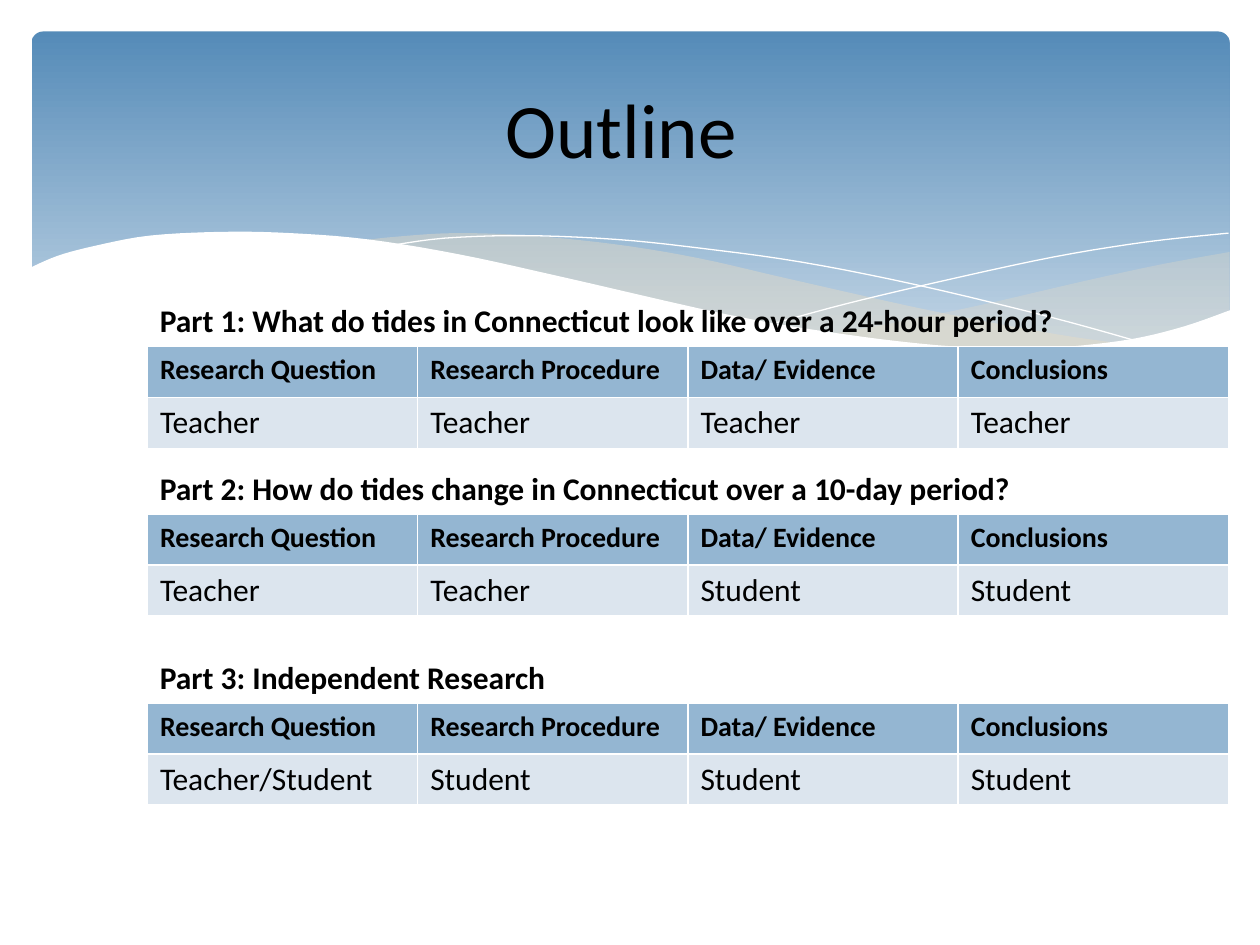
import pptx
import pptx.dml.color
import pptx.enum.shapes
import pptx.enum.text
import pptx.util
import lxml.etree

Inches = pptx.util.Inches
COLORS = {"text": "000000", "white": "FFFFFF", "sky": "558BB8", "haze": "BFD3E4",
          "sand": "EBDDC3", "header": "94B6D2", "row": "DCE5EE"}
HEADERS = ["Research Question", "Research Procedure", "Data/ Evidence", "Conclusions"]
PARTS = [
    (2.75, "Part 1: What do tides in Connecticut look like over a 24-hour period?",
     ["Teacher"] * 4),
    (4.08, "Part 2: How do tides change in Connecticut over a 10-day period?",
     ["Teacher", "Teacher", "Student", "Student"]),
    (5.58, "Part 3: Independent Research", ["Teacher/Student"] + ["Student"] * 3),
]
RIGHT_WAVE = [
    [(9.76, 2), (9.21, 2.1), (8.61, 2.23), (7.79, 2.42), (7.06, 2.57), (6.61, 2.65)],
    [(6.61, 2.65), (7.19, 2.72), (7.69, 2.77), (8.14, 2.78), (8.63, 2.75),
     (9.05, 2.69), (9.42, 2.59), (9.76, 2.47)],
]
LONG_WAVE = [
    [(8.93, 2.73), (8.37, 2.65), (7.41, 2.47), (6.29, 2.22), (5.55, 2.05),
     (4.89, 1.94), (4.2, 1.87), (3.61, 1.85), (3.13, 1.88), (2.86, 1.91)],
    [(2.86, 1.91), (3.42, 1.99), (4.04, 2.11), (4.91, 2.32), (5.84, 2.52),
     (6.65, 2.66), (7.36, 2.75), (7.96, 2.78), (8.48, 2.77), (8.93, 2.73)],
]
FALLING_LINE = [[(3.09, 1.95), (3.53, 1.89), (4.16, 1.87), (4.89, 1.9), (5.56, 1.97),
                 (6.36, 2.08), (7.27, 2.26), (8.31, 2.51), (9.07, 2.72)]]
RISING_LINE = [[(6.13, 2.57), (6.72, 2.41), (7.48, 2.23), (8.36, 2.04), (9.1, 1.92),
                (9.75, 1.85)]]
WHITE_WAVE = [
    [(9.77, 2.46), (9.4, 2.59), (8.99, 2.69), (8.5, 2.75), (8.09, 2.77), (7.44, 2.74),
     (6.68, 2.65), (5.79, 2.5), (4.47, 2.2), (3.65, 2.02), (2.92, 1.9), (2.3, 1.85),
     (1.77, 1.84), (1.19, 1.87), (0.76, 1.95), (0.46, 2.03), (0.23, 2.13)],
    [(0.23, 3.29)],
    [(9.77, 3.29)],
]


def color(name):
    return pptx.dml.color.RGBColor.from_string(COLORS[name])


def smooth_curve(knots, steps=5):
    padded = [knots[0], *knots, knots[-1]]
    points = [knots[0]]
    for a, b, c, d in zip(padded, padded[1:], padded[2:], padded[3:]):
        for step in range(1, steps + 1):
            t = step / steps
            points.append(tuple(
                q + t / 2 * (r - p + t * (2 * p - 5 * q + 4 * r - s
                                          + t * (3 * (q - r) + s - p)))
                for p, q, r, s in zip(a, b, c, d)))
    return points


def write(frame, text, size=18, bold=False, align=None):
    para = frame.paragraphs[0]
    para.alignment = align
    span = para.add_run()
    span.text = text
    span.font.name = "Calibri"
    span.font.size = pptx.util.Pt(size)
    span.font.bold = bold
    span.font.color.rgb = color("text")


class Page:
    def __init__(self, deck):
        self.slide = deck.slides.add_slide(deck.slide_layouts[5])
        self.shapes = self.slide.shapes

    def banner(self, left, top, width, height):
        box = self.shapes.add_shape(
            pptx.enum.shapes.MSO_SHAPE.ROUNDED_RECTANGLE,
            Inches(left), Inches(top), Inches(width), Inches(height))
        box.adjustments[0] = 0.034
        box.shadow.inherit = False
        box.line.fill.background()
        box.fill.gradient()
        box.fill.gradient_angle = 270
        for stop, name, position in zip(box.fill.gradient_stops, ("sky", "haze"), (0, 0.9)):
            stop.color.rgb = color(name)
            stop.position = position

    def wave(self, edges, fill=None, opacity=100):
        points = [(Inches(x), Inches(y)) for edge in edges for x, y in smooth_curve(edge)]
        builder = self.shapes.build_freeform(*points[0])
        builder.add_line_segments(points[1:], close=fill is not None)
        shape = builder.convert_to_shape()
        shape.shadow.inherit = False
        if fill is None:
            shape.fill.background()
            shape.line.color.rgb = color("white")
            shape.line.width = 0
            return
        shape.line.fill.background()
        shape.fill.solid()
        shape.fill.fore_color.rgb = color(fill)
        if opacity < 100:
            tone = shape.fill._xPr.find(".//" + pptx.oxml.ns.qn("a:srgbClr"))
            lxml.etree.SubElement(tone, pptx.oxml.ns.qn("a:alpha"), val=str(opacity * 1000))

    def title(self, text, left, top, width, height):
        box = self.shapes.title
        box.left, box.top = Inches(left), Inches(top)
        box.width, box.height = Inches(width), Inches(height)
        box.text_frame.vertical_anchor = pptx.enum.text.MSO_ANCHOR.MIDDLE
        write(box.text_frame, text, size=44, align=pptx.enum.text.PP_ALIGN.CENTER)
        self.shapes._spTree.append(box._element)

    def caption(self, text, left, top, width, height):
        box = self.shapes.add_textbox(Inches(left), Inches(top), Inches(width), Inches(height))
        box.text_frame.word_wrap = True
        write(box.text_frame, text, bold=True)

    def table(self, rows, left, top, width, height):
        table = self.shapes.add_table(
            len(rows), len(rows[0]), Inches(left), Inches(top),
            Inches(width), Inches(height)).table
        table.horz_banding = False
        for r, row in enumerate(rows):
            for c, text in enumerate(row):
                cell = table.cell(r, c)
                cell.fill.solid()
                cell.fill.fore_color.rgb = color("row" if r else "header")
                write(cell.text_frame, text, size=18 if r else 16, bold=r == 0)


def main():
    deck = pptx.Presentation()
    deck.slide_width, deck.slide_height = Inches(10), Inches(7.5)
    page = Page(deck)
    page.banner(0.25, 0.25, 9.51, 2.7)
    page.wave(RIGHT_WAVE, fill="sand", opacity=29)
    page.wave(LONG_WAVE, fill="sand", opacity=40)
    page.wave(FALLING_LINE)
    page.wave(RISING_LINE)
    page.wave(WHITE_WAVE, fill="white")
    for top, _, roles in PARTS:
        page.table([HEADERS, roles], 1.17, top, 8.58, 0.81)
    page.title("Outline ", 0.5, 0.33, 9, 1.37)
    for top, question, _ in PARTS:
        page.caption(question, 1.17, top - 0.41, 8.58, 0.4)
    deck.save("out.pptx")


if __name__ == "__main__":
    main()
